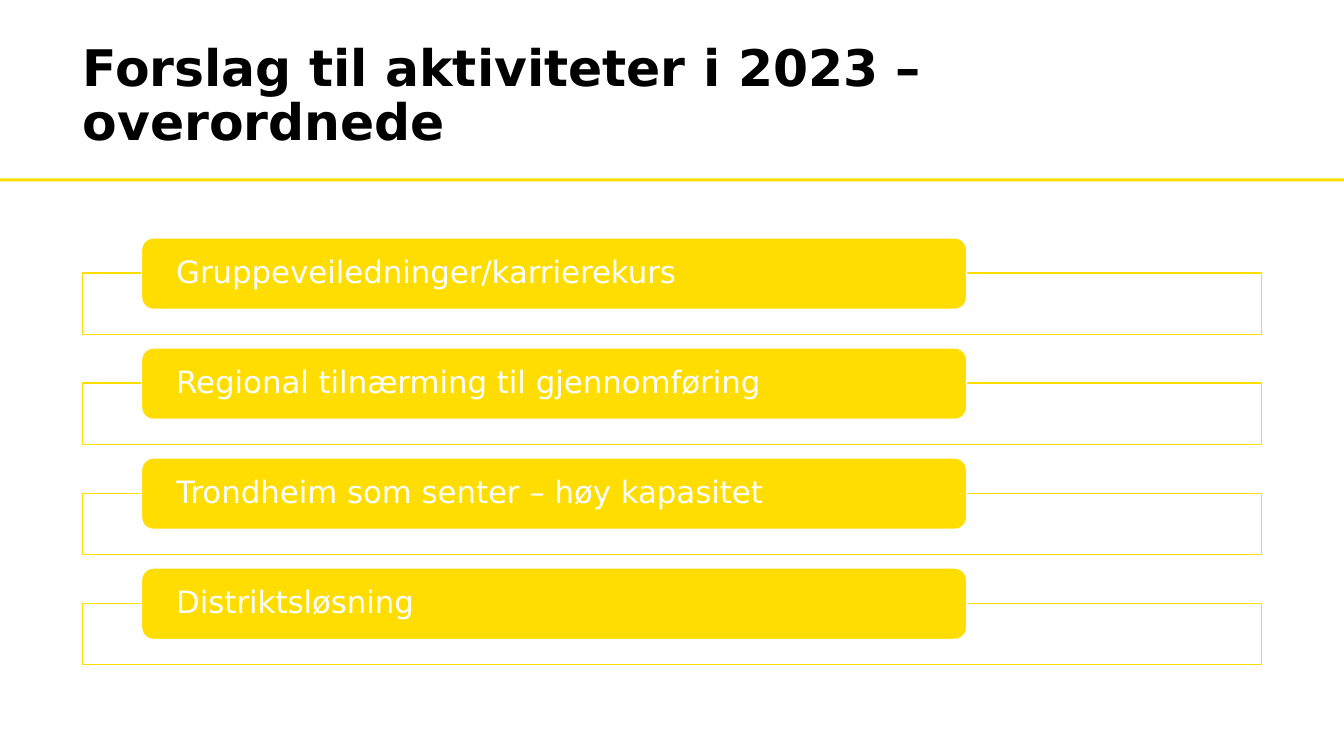
import dataclasses

import lxml.etree
import pptx
import pptx.dml.color
import pptx.enum.shapes
import pptx.enum.text
import pptx.oxml.ns
import pptx.util

SHAPES = pptx.enum.shapes.MSO_SHAPE
TITLE = "Forslag til aktiviteter i 2023 – overordnede"
ACTIVITIES = [
    "Gruppeveiledninger/karrierekurs",
    "Regional tilnærming til gjennomføring",
    "Trondheim som senter – høy kapasitet",
    "Distriktsløsning",
]


@dataclasses.dataclass(frozen=True)
class Theme:
    font: str = "DejaVu Sans"
    accent: str = "FFDD00"
    paper: str = "FFFFFF"
    ink: str = "000000"
    title_size: int = 36
    label_size: int = 22
    outline: int = 1


@dataclasses.dataclass(frozen=True)
class Box:
    left: float
    top: float
    width: float
    height: float

    def inner(self, left, top, width, height):
        return Box(
            self.left + left * self.width,
            self.top + top * self.height,
            width * self.width,
            height * self.height,
        )

    def grid(self, column, row, columns, rows):
        return self.inner(column / 100, row / 100, columns / 100, rows / 100)

    def place(self):
        return [int(length) for length in dataclasses.astuple(self)]


THEME = Theme()


def color(value):
    return pptx.dml.color.RGBColor.from_string(value)


def add_block(page, kind, box, fill, line=None):
    block = page.shapes.add_shape(kind, *box.place())
    block.shadow.inherit = False
    block.fill.solid()
    block.fill.fore_color.rgb = color(fill)
    if line:
        block.line.color.rgb = color(line)
        block.line.width = pptx.util.Pt(THEME.outline)
    else:
        block.line.fill.background()
    return block


def write(shape, text, size, ink, inset=0, bold=False):
    frame = shape.text_frame
    frame.word_wrap = True
    frame.auto_size = pptx.enum.text.MSO_AUTO_SIZE.NONE
    frame.vertical_anchor = pptx.enum.text.MSO_ANCHOR.MIDDLE
    frame.margin_left = frame.margin_right = pptx.util.Inches(inset)
    frame.margin_top = frame.margin_bottom = 0
    para = frame.paragraphs[0]
    para.alignment = pptx.enum.text.PP_ALIGN.LEFT
    para.line_spacing = 0.9
    span = para.add_run()
    span.text = text
    span.font.name = THEME.font
    span.font.size = pptx.util.Pt(size)
    span.font.bold = bold
    span.font.color.rgb = color(ink)


def set_opacity(shape, percent):
    tone = next(shape.element.spPr.iter(pptx.oxml.ns.qn("a:srgbClr")))
    alpha = lxml.etree.SubElement(tone, pptx.oxml.ns.qn("a:alpha"))
    alpha.set("val", str(percent * 1000))


def add_title(page, box):
    title = page.shapes.title
    title.left, title.top, title.width, title.height = box.place()
    write(title, TITLE, THEME.title_size, THEME.ink, bold=True)


def add_activity(page, box, label):
    frame = add_block(
        page, SHAPES.RECTANGLE, box.inner(0, 0.32, 1, 0.56), THEME.paper, THEME.accent
    )
    set_opacity(frame, 90)
    pill = add_block(
        page,
        SHAPES.ROUNDED_RECTANGLE,
        box.inner(0.05, 0, 0.7, 0.65),
        THEME.accent,
        THEME.paper,
    )
    write(pill, label, THEME.label_size, THEME.paper, inset=0.31)


def add_activities(page, box):
    share = 1 / len(ACTIVITIES)
    for index, label in enumerate(ACTIVITIES):
        add_activity(page, box.inner(0, index * share, 1, share), label)


def main():
    deck = pptx.Presentation()
    deck.slide_width = pptx.util.Inches(13.33)
    deck.slide_height = pptx.util.Inches(7.5)
    page = deck.slides.add_slide(deck.slide_layouts[5])
    canvas = Box(0, 0, deck.slide_width, deck.slide_height)
    add_title(page, canvas.grid(6.15, 4.8, 78.77, 16.13))
    add_block(page, SHAPES.RECTANGLE, canvas.grid(0, 23.6, 100, 0.4), THEME.accent)
    add_activities(page, canvas.grid(6.15, 31.47, 87.7, 58.22))
    deck.save("out.pptx")


if __name__ == "__main__":
    main()
